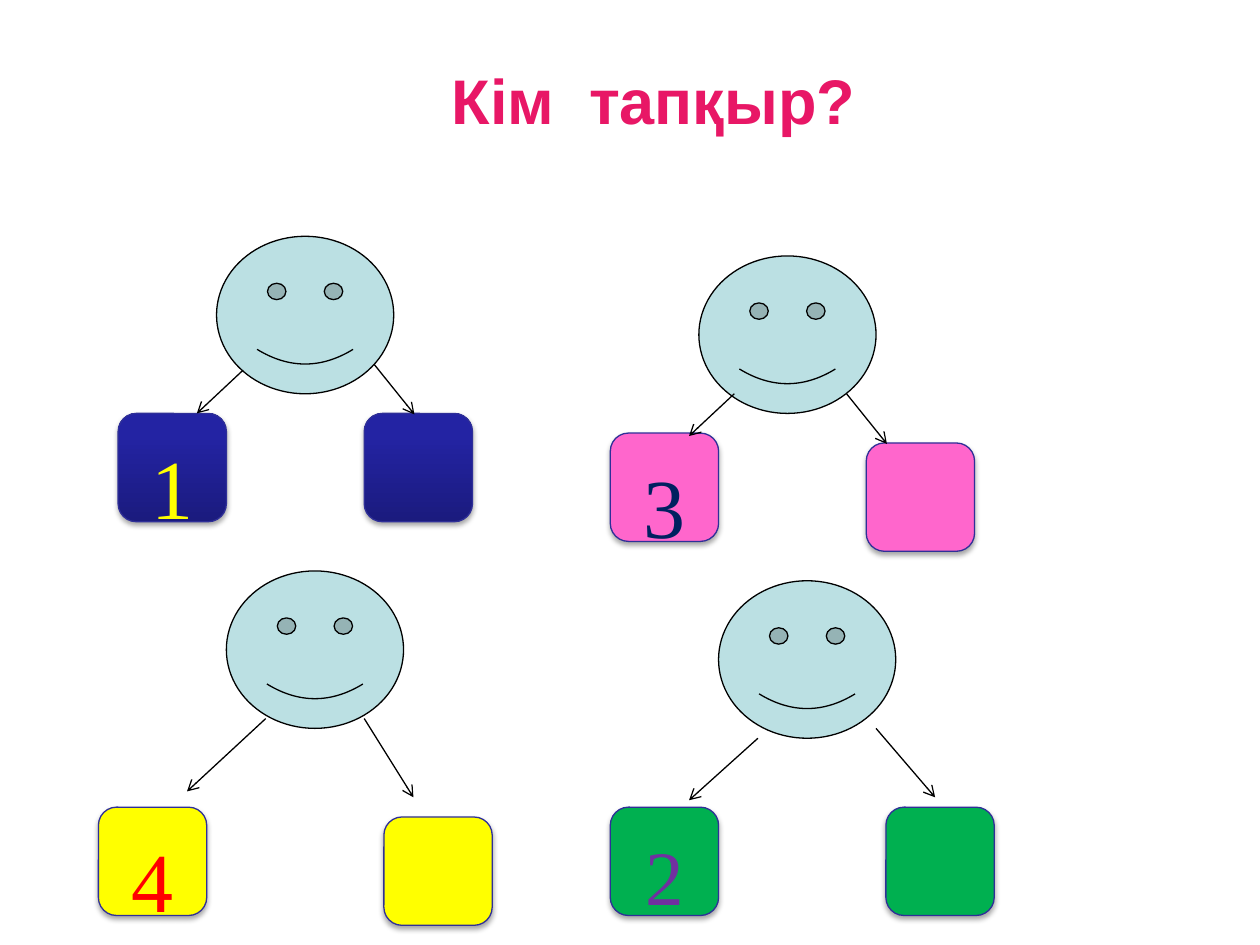
import dataclasses
import typing

import pptx
import pptx.dml.color
import pptx.enum.shapes
import pptx.enum.text
import pptx.oxml
import pptx.oxml.ns
import pptx.util

COLUMNS, ROWS = 128, 96
FACE_SIZE = (18, 16)
CARD_SIZE = (11, 11)
THIN = pptx.util.Pt(0.75)
COLORS = {
    "title": "E81766",
    "face": "BBE0E3",
    "ink": "000000",
    "card_edge": "2F2F98",
    "navy_dark": "1B1B7E",
    "navy": "2323A3",
    "pink": "FF66CC",
    "yellow": "FFFF00",
    "green": "00B050",
    "deep_blue": "002060",
    "red": "FF0000",
    "purple": "7030A0",
}
SHADOW = (
    '<a:outerShdw {} blurRad="39370" dist="22860" dir="5400000" rotWithShape="0">'
    '<a:srgbClr val="000000"><a:alpha val="35000"/></a:srgbClr></a:outerShdw>'
).format(pptx.oxml.ns.nsdecls("a"))

Point = typing.Tuple[float, float]


@dataclasses.dataclass
class Arrow:
    start: Point
    end: Point


@dataclasses.dataclass
class Family:
    """A face with arrows to a numbered card and an empty card."""
    face: Point
    numbered: Point
    empty: Point
    arrows: typing.Tuple[Arrow, Arrow]
    fill: str
    digit: str
    digit_color: str
    digit_size: int = 48


# Positions in columns and rows of the slide grid
FAMILIES = [
    Family((22, 24), (12, 42), (37, 42),
           (Arrow((24.7, 37.6), (20, 42)), Arrow((38, 37), (42.1, 42.1))),
           "navy", "1", "yellow"),
    Family((71, 26), (62, 44), (88, 45),
           (Arrow((74.6, 40), (70, 44.3)), Arrow((86, 40), (90.1, 45.1))),
           "pink", "3", "deep_blue"),
    Family((23, 58), (10, 82), (39, 83),
           (Arrow((27, 73), (19, 80.4)), Arrow((37, 73), (42, 81))),
           "yellow", "4", "red"),
    Family((73, 59), (62, 82), (90, 82),
           (Arrow((77, 75), (70, 81.3)), Arrow((89, 74), (95, 81))),
           "green", "2", "purple", 44),
]


def color(name: str) -> pptx.dml.color.RGBColor:
    return pptx.dml.color.RGBColor.from_string(COLORS[name])


def apply(target: typing.Any, values: typing.Dict[str, typing.Any]) -> None:
    for name, value in values.items():
        setattr(target, name, value)


def place(*cells: float) -> typing.List[int]:
    """Turn alternating columns and rows into slide lengths."""
    steps = (deck.slide_width / COLUMNS, deck.slide_height / ROWS)
    return [round(cell * steps[index % 2]) for index, cell in enumerate(cells)]


def write(box: typing.Any, text: str, font: str, size: int, ink: str,
          bold: bool, top: float) -> None:
    frame = box.text_frame
    apply(frame, {
        "auto_size": pptx.enum.text.MSO_AUTO_SIZE.NONE,
        "vertical_anchor": pptx.enum.text.MSO_ANCHOR.TOP,
        "margin_top": pptx.util.Inches(top),
        "margin_bottom": 0,
    })
    para = frame.paragraphs[0]
    para.alignment = pptx.enum.text.PP_ALIGN.CENTER
    span = para.add_run()
    span.text = text
    apply(span.font, {"name": font, "size": pptx.util.Pt(size), "bold": bold})
    span.font.color.rgb = color(ink)


def add_outlined(kind: typing.Any, at: Point, size: Point, edge: str) -> typing.Any:
    shape = page.shapes.add_shape(kind, *place(*at, *size))
    shape.shadow.inherit = False
    shape.line.color.rgb = color(edge)
    shape.line.width = THIN
    return shape


def add_face(at: Point) -> None:
    face = add_outlined(pptx.enum.shapes.MSO_SHAPE.SMILEY_FACE, at, FACE_SIZE, "ink")
    face.fill.solid()
    face.fill.fore_color.rgb = color("face")
    face.adjustments[0] = 0.047


def add_card(at: Point, fill: str) -> typing.Any:
    card = add_outlined(pptx.enum.shapes.MSO_SHAPE.ROUNDED_RECTANGLE, at,
                        CARD_SIZE, "card_edge")
    if fill == "navy":
        card.fill.gradient()
        card.fill.gradient_angle = 90
        stops = zip(card.fill.gradient_stops, (0, 0.8), ("navy_dark", "navy"))
        for stop, position, name in stops:
            stop.position = position
            stop.color.rgb = color(name)
    else:
        card.fill.solid()
        card.fill.fore_color.rgb = color(fill)
    effects = card._element.spPr.find(pptx.oxml.ns.qn("a:effectLst"))
    effects.append(pptx.oxml.parse_xml(SHADOW))
    return card


def add_arrow(arrow: Arrow) -> None:
    line = page.shapes.add_connector(pptx.enum.shapes.MSO_CONNECTOR.STRAIGHT,
                                     *place(*arrow.start, *arrow.end))
    line.line.color.rgb = color("ink")
    line.line.width = THIN
    namespace = pptx.oxml.ns.nsdecls("a")
    line.line._get_or_add_ln().append(
        pptx.oxml.parse_xml(f'<a:tailEnd {namespace} type="arrow"/>'))
    line._element.spPr.append(pptx.oxml.parse_xml(f"<a:effectLst {namespace}/>"))


deck = pptx.Presentation()
apply(deck, {"slide_width": pptx.util.Inches(10),
             "slide_height": pptx.util.Inches(7.5)})
page = deck.slides.add_slide(deck.slide_layouts.get_by_name("Title Only"))

# Title
title = page.shapes.title
left, top, width, height = place(18, 5, 96.8, 17.8)
apply(title, {"left": left, "top": top, "width": width, "height": height})
write(title, "Кім  тапқыр?", "Arial", 36, "title", True, 0.1)
title.text_frame.word_wrap = False

# Faces with their cards
for family in FAMILIES:
    add_face(family.face)
    numbered = add_card(family.numbered, family.fill)
    write(numbered, family.digit, "Times New Roman", family.digit_size,
          family.digit_color, False, 0.13)
    add_card(family.empty, family.fill)

# Arrows lie above all the cards
for family in FAMILIES:
    for arrow in family.arrows:
        add_arrow(arrow)

deck.save("out.pptx")
